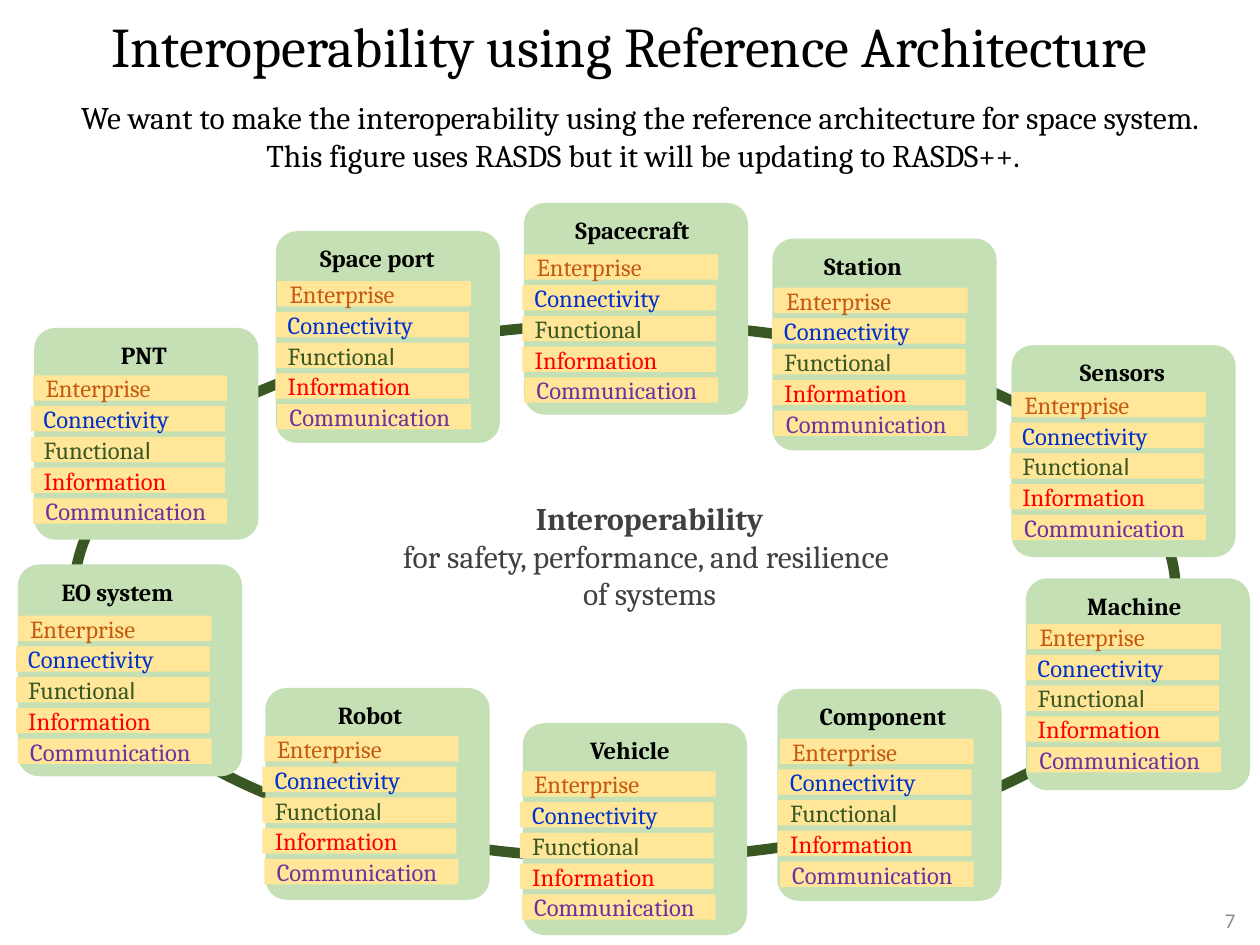
from pptx import Presentation
from pptx.dml.color import RGBColor as Rgb
from pptx.enum.shapes import MSO_SHAPE as Kind
from pptx.enum.text import MSO_ANCHOR as Anchor, MSO_AUTO_SIZE as Fit, PP_ALIGN as Align
from pptx.util import Cm, Pt

TITLE = "Interoperability using Reference Architecture"
INTRO = ["We want to make the interoperability using the reference architecture for space system. ",
         "This figure uses RASDS but it will be updating to RASDS++."]
GOAL = ["Interoperability", "for safety, performance, and resilience ", "of systems"]
PAGE = "7"
VIEWS = [
    ("Enterprise", "C55A11", 0),
    ("Connectivity", "0033CC", -0.04),
    ("Functional", "385723", -0.04),
    ("Information", "FF0000", -0.04),
    ("Communication", "7030A0", 0),
]
CARDS = [
    ("Spacecraft", (10.56, 4.09), (10.57, 5.13), 12.75),
    ("Station", (15.57, 4.81), (15.6, 5.8), 17.4),
    ("Space port", (5.56, 4.66), (5.59, 5.67), 7.61),
    ("Sensors", (20.39, 6.96), (20.4, 7.9), 22.63),
    ("PNT", (0.69, 6.61), (0.67, 7.57), 2.9),
    ("Vehicle", (10.54, 14.58), (10.52, 15.55), 12.7),
    ("Robot", (5.35, 13.87), (5.33, 14.84), 7.46),
    ("Component", (15.67, 13.89), (15.72, 14.89), 17.8),
    ("Machine", (20.68, 11.66), (20.71, 12.58), 22.87),
    ("EO system", (0.36, 11.38), (0.36, 12.41), 2.37),
]
CARD_W, CARD_H = 4.52, 4.27
ROW_W, ROW_H, PITCH = 3.91, 0.51, 0.62
NAME_W, NAME_H = 4, 0.86


def color(code):
    return Rgb.from_string(code)


def style(part, size, code, bold=False, font="Cambria"):
    for run in part.runs:
        run.font.name = font
        run.font.size = Pt(size)
        run.font.bold = bold
        run.font.color.rgb = color(code)


def write(shape, lines, size, code, bold=False, font="Cambria", align=Align.CENTER):
    frame = shape.text_frame
    frame.text = "\n".join(lines)
    for part in frame.paragraphs:
        part.alignment = align
        style(part, size, code, bold, font)
    return frame


def label(slide, box, lines, size, code, bold=False, font="Cambria"):
    shape = slide.shapes.add_textbox(*map(Cm, box))
    frame = write(shape, lines, size, code, bold, font)
    frame.word_wrap = True
    return frame


def block(slide, kind, box, fill=None):
    shape = slide.shapes.add_shape(kind, *map(Cm, box))
    shape.shadow.inherit = False
    if fill:
        shape.fill.solid()
        shape.fill.fore_color.rgb = color(fill)
        shape.line.fill.background()
    else:
        shape.fill.background()
    return shape


def card(slide, name, spot, start, middle):
    base = block(slide, Kind.ROUNDED_RECTANGLE, (*spot, CARD_W, CARD_H), "C5E0B4")
    base.adjustments[0] = 0.1
    box = (middle - NAME_W / 2, spot[1] + 0.12, NAME_W, NAME_H)
    label(slide, box, [name], 14, "000000", True)
    left, top = start
    for i, (view, code, shift) in enumerate(VIEWS):
        box = (left + shift, top + i * PITCH, ROW_W, ROW_H)
        row = block(slide, Kind.RECTANGLE, box, "FFE699")
        frame = write(row, [view], 14, code, align=Align.LEFT)
        frame.vertical_anchor = Anchor.MIDDLE
        if view == "Functional":
            part = frame.paragraphs[0]
            part.runs[0].text = view[:-1]
            part.add_run().text = view[-1]
            style(part, 14, code)
            part.runs[1].font.name = "Calibri"


def main():
    deck = Presentation()
    deck.slide_width, deck.slide_height = Cm(25.4), Cm(19.05)
    slide = deck.slides.add_slide(deck.slide_layouts[5])

    title = slide.shapes.title
    title.left, title.top, title.width, title.height = map(Cm, (0, 0.1, 25.4, 1.63))
    frame = write(title, [TITLE], 32, "000000")
    frame.auto_size = Fit.NONE
    frame.vertical_anchor = Anchor.TOP

    label(slide, (0.89, 1.85, 24.16, 1.8), INTRO, 18, "000000")
    goal = label(slide, (7.34, 9.93, 11.51, 2.57), GOAL, 18, "404040")
    style(goal.paragraphs[0], 18, "404040", True)
    page = label(slide, (24.2, 18.03, 1.2, 1.02), [PAGE], 12, "8C8C8C", font="Calibri")
    page.vertical_anchor = Anchor.MIDDLE

    ring = block(slide, Kind.OVAL, (1.5, 6.53, 22.2, 10.77))
    ring.line.color.rgb = color("385723")
    ring.line.width = Pt(6)
    for item in CARDS:
        card(slide, *item)
    deck.save("out.pptx")


if __name__ == "__main__":
    main()
